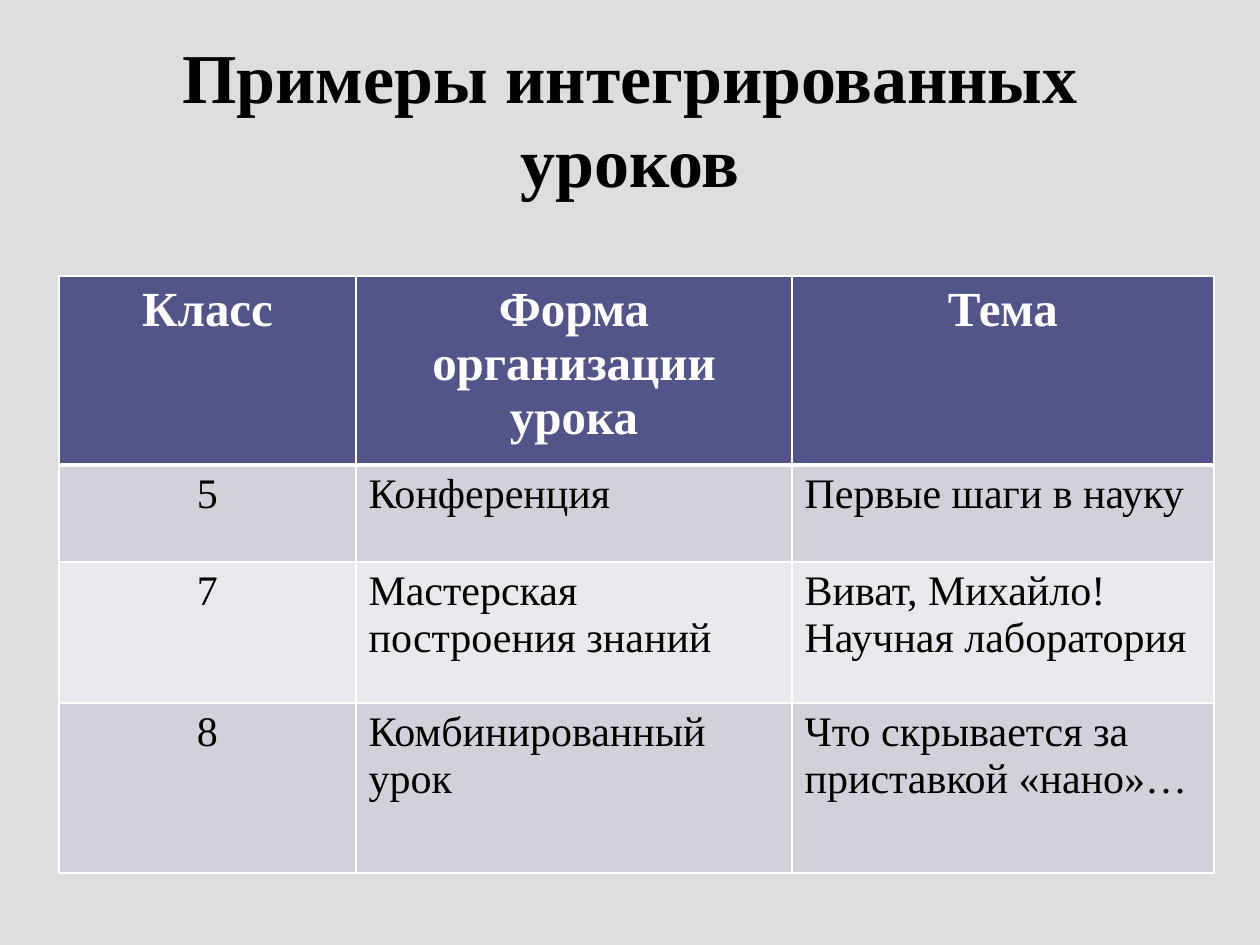
from dataclasses import dataclass

from lxml.etree import SubElement
from pptx import Presentation
from pptx.dml.color import RGBColor as RGB
from pptx.enum.text import MSO_ANCHOR as Anchor, PP_ALIGN as Align
from pptx.oxml.ns import qn
from pptx.util import Emu, Pt

TITLE = "Примеры интегрированных уроков"
ROWS = [
    ("Класс", "Форма организации урока", "Тема"),
    ("5", "Конференция", "Первые шаги в науку"),
    ("7", "Мастерская построения знаний", "Виват, Михайло! Научная лаборатория"),
    ("8", "Комбинированный урок", "Что скрывается за приставкой «нано»…"),
]
WIDTHS = (297, 436, 422)
HEIGHTS = (185, 97, 141, 170)


@dataclass(frozen=True)
class Theme:
    font: str = "Times New Roman"
    back: str = "DEDEDE"
    ink: str = "000000"
    light: str = "FFFFFF"
    head: str = "53548A"
    bands: tuple = ("E9E9ED", "D1D1DA")
    title_pt: int = 40
    head_pt: int = 28
    body_pt: int = 24


THEME = Theme()


def px(n):
    return Emu(round(n * 914400 / 126))


def style(frame, size, color, bold, align):
    para = frame.paragraphs[0]
    para.alignment = align
    font = para.font
    font.name, font.size, font.bold = THEME.font, Pt(size), bold
    font.color.rgb = RGB.from_string(color)


def add_edge(cell, side, width):
    line = SubElement(cell._tc.get_or_add_tcPr(), qn(f"a:ln{side}"), w=str(Pt(width)))
    fill = SubElement(line, qn("a:solidFill"))
    SubElement(fill, qn("a:srgbClr"), val=THEME.light)


def fill_cell(cell, text, row, col):
    head = row == 0
    cell.text = text
    style(
        cell.text_frame,
        THEME.head_pt if head else THEME.body_pt,
        THEME.light if head else THEME.ink,
        head,
        Align.CENTER if head or col == 0 else Align.LEFT,
    )
    for side in "LRTB":
        thick = (head and side == "B") or (row == 1 and side == "T")
        add_edge(cell, side, 3 if thick else 1)
    cell.fill.solid()
    cell.fill.fore_color.rgb = RGB.from_string(THEME.head if head else THEME.bands[row % 2])


def main():
    deck = Presentation()
    deck.slide_width, deck.slide_height = px(1260), px(945)
    slide = deck.slides.add_slide(deck.slide_layouts[6])
    slide.background.fill.solid()
    slide.background.fill.fore_color.rgb = RGB.from_string(THEME.back)

    frame = slide.shapes.add_textbox(px(63), px(38), px(1134), px(158)).text_frame
    frame.word_wrap = True
    frame.vertical_anchor = Anchor.MIDDLE
    frame.text = TITLE
    style(frame, THEME.title_pt, THEME.ink, True, Align.CENTER)

    table = slide.shapes.add_table(
        len(ROWS), len(WIDTHS), px(59), px(276), px(sum(WIDTHS)), px(sum(HEIGHTS))
    ).table
    for col, width in zip(table.columns, WIDTHS):
        col.width = px(width)
    for row, height in zip(table.rows, HEIGHTS):
        row.height = px(height)
    for r, texts in enumerate(ROWS):
        for c, text in enumerate(texts):
            fill_cell(table.cell(r, c), text, r, c)

    deck.save("out.pptx")


if __name__ == "__main__":
    main()
